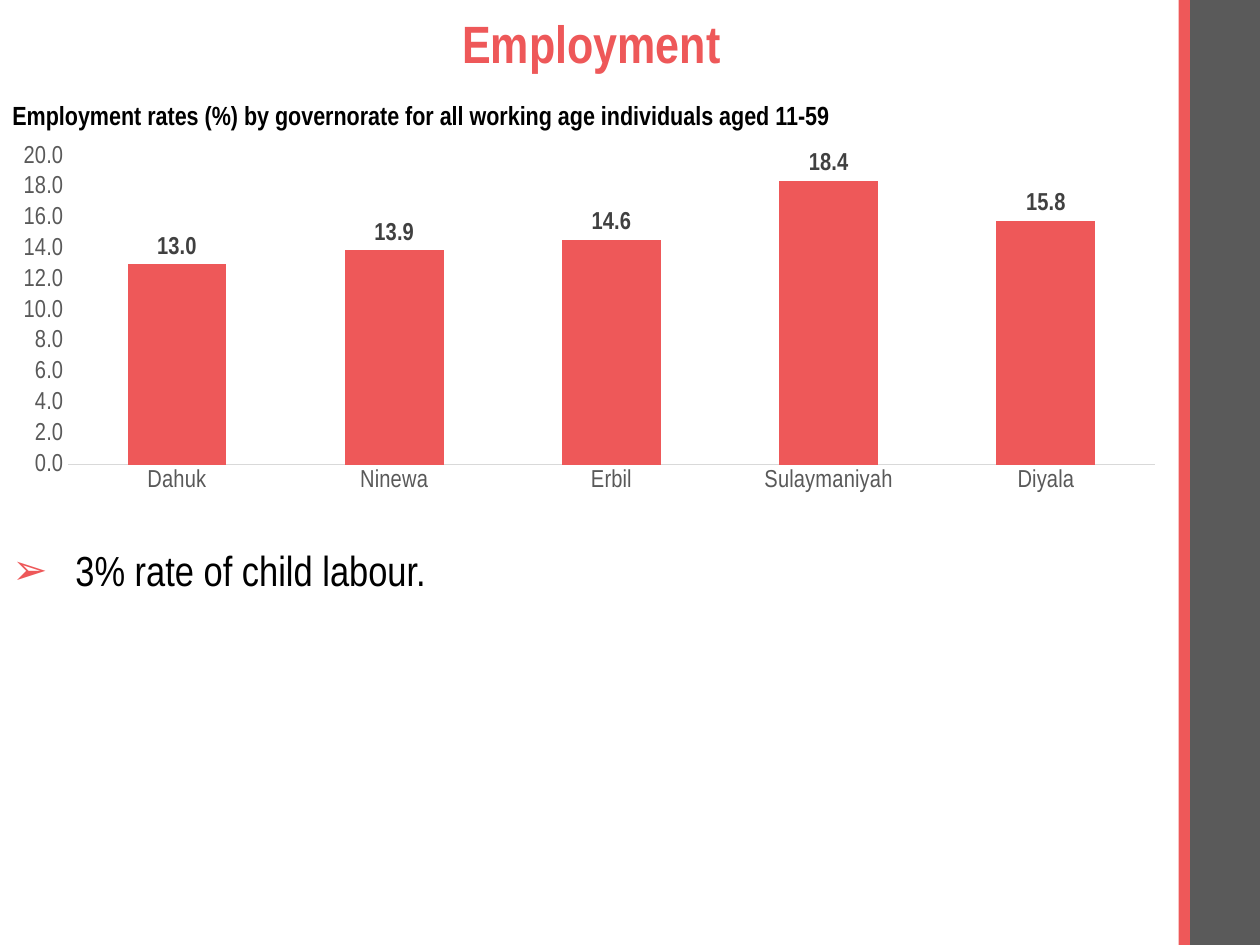
import pptx
import pptx.chart.data
import pptx.dml.color
import pptx.enum.chart
import pptx.enum.shapes
import pptx.enum.text
import pptx.util
from lxml import etree
from pptx.util import Cm, Pt

COLORS = {
    "accent": "EE5859",
    "band": "5A5A5A",
    "text": "000000",
    "axis_text": "595959",
    "axis_line": "D9D9D9",
    "label": "404040",
}
FONT = "Arial Narrow"


def style_font(font, size, color, bold=False):
    font.name = FONT
    font.size = Pt(size)
    font.bold = bold
    font.color.rgb = pptx.dml.color.RGBColor.from_string(COLORS[color])


def add_text(left, top, width, height, text):
    """Add a wrapping one-paragraph text box and return its frame and paragraph."""
    box = slide.shapes.add_textbox(Cm(left), Cm(top), Cm(width), Cm(height))
    frame = box.text_frame
    frame.word_wrap = True
    paragraph = frame.paragraphs[0]
    paragraph.text = text
    return frame, paragraph


presentation = pptx.Presentation()
presentation.slide_width = Cm(25.4)
presentation.slide_height = Cm(19.05)
slide = presentation.slides.add_slide(presentation.slide_layouts[6])

# Vertical bands on the right edge
for left, width, color in [(23.98, 1.42, "band"), (23.76, 0.23, "accent")]:
    band = slide.shapes.add_shape(
        pptx.enum.shapes.MSO_SHAPE.RECTANGLE, Cm(left), 0, Cm(width), presentation.slide_height
    )
    band.shadow.inherit = False
    band.fill.solid()
    band.fill.fore_color.rgb = pptx.dml.color.RGBColor.from_string(COLORS[color])
    band.line.fill.background()

# Title
frame, paragraph = add_text(0.89, 0, 22.07, 1.88, "Employment")
frame.vertical_anchor = pptx.enum.text.MSO_ANCHOR.MIDDLE
paragraph.alignment = pptx.enum.text.PP_ALIGN.CENTER
paragraph.line_spacing = 0.9
style_font(paragraph.font, 30, "accent", bold=True)

# Bulleted finding
frame, paragraph = add_text(0, 10.97, 23.75, 8.08, "3% rate of child labour.")
paragraph.line_spacing = 0.9
properties = paragraph._p.get_or_add_pPr()
properties.set("marL", str(Cm(1.27)))
properties.set("indent", str(-Cm(1.27)))
namespace = pptx.oxml.ns.qn("a:p")[:-1]
bullet_color = etree.SubElement(properties, namespace + "buClr")
etree.SubElement(bullet_color, namespace + "srgbClr", val=COLORS["accent"])
etree.SubElement(properties, namespace + "buFont", typeface="Wingdings 3")
etree.SubElement(properties, namespace + "buChar", char="➢")
properties.find(namespace + "buFont").set("typeface", "Arial")
style_font(paragraph.font, 24, "text")

# Chart heading
frame, paragraph = add_text(
    0, 1.88, 18.82, 0.89,
    "Employment rates (%) by governorate for all working age individuals aged 11-59",
)
style_font(paragraph.font, 15, "text", bold=True)

# Employment chart
chart_data = pptx.chart.data.CategoryChartData(number_format="0.0")
chart_data.categories = ["Dahuk", "Ninewa", "Erbil", "Sulaymaniyah", "Diyala"]
chart_data.add_series("Series 1", [13, 13.9, 14.6, 18.4, 15.8])
chart = slide.shapes.add_chart(
    pptx.enum.chart.XL_CHART_TYPE.COLUMN_CLUSTERED,
    Cm(0), Cm(2.77), Cm(23.75), Cm(7.32), chart_data,
).chart
chart.has_legend = False
chart.has_title = False
style_font(chart.font, 14, "text")

for axis in (chart.category_axis, chart.value_axis):
    axis.major_tick_mark = pptx.enum.chart.XL_TICK_MARK.NONE
    axis.minor_tick_mark = pptx.enum.chart.XL_TICK_MARK.NONE
    axis.has_major_gridlines = False
    style_font(axis.tick_labels.font, 14, "axis_text")

axis_line = chart.category_axis.format.line
axis_line.color.rgb = pptx.dml.color.RGBColor.from_string(COLORS["axis_line"])
axis_line.width = Pt(0.75)

value_axis = chart.value_axis
value_axis.format.line.fill.background()
value_axis.minimum_scale = 0
value_axis.maximum_scale = 20
value_axis.major_unit = 2
value_axis.tick_labels.number_format = "0.0"
value_axis.tick_labels.number_format_is_linked = False

plot = chart.plots[0]
plot.gap_width = 120
plot.overlap = -27
plot.vary_by_categories = False
fill = plot.series[0].format.fill
fill.solid()
fill.fore_color.rgb = pptx.dml.color.RGBColor.from_string(COLORS["accent"])

plot.has_data_labels = True
labels = plot.data_labels
labels.show_value = True
labels.number_format = "0.0"
labels.number_format_is_linked = False
labels.position = pptx.enum.chart.XL_LABEL_POSITION.OUTSIDE_END
style_font(labels.font, 14, "label", bold=True)

presentation.save("out.pptx")
